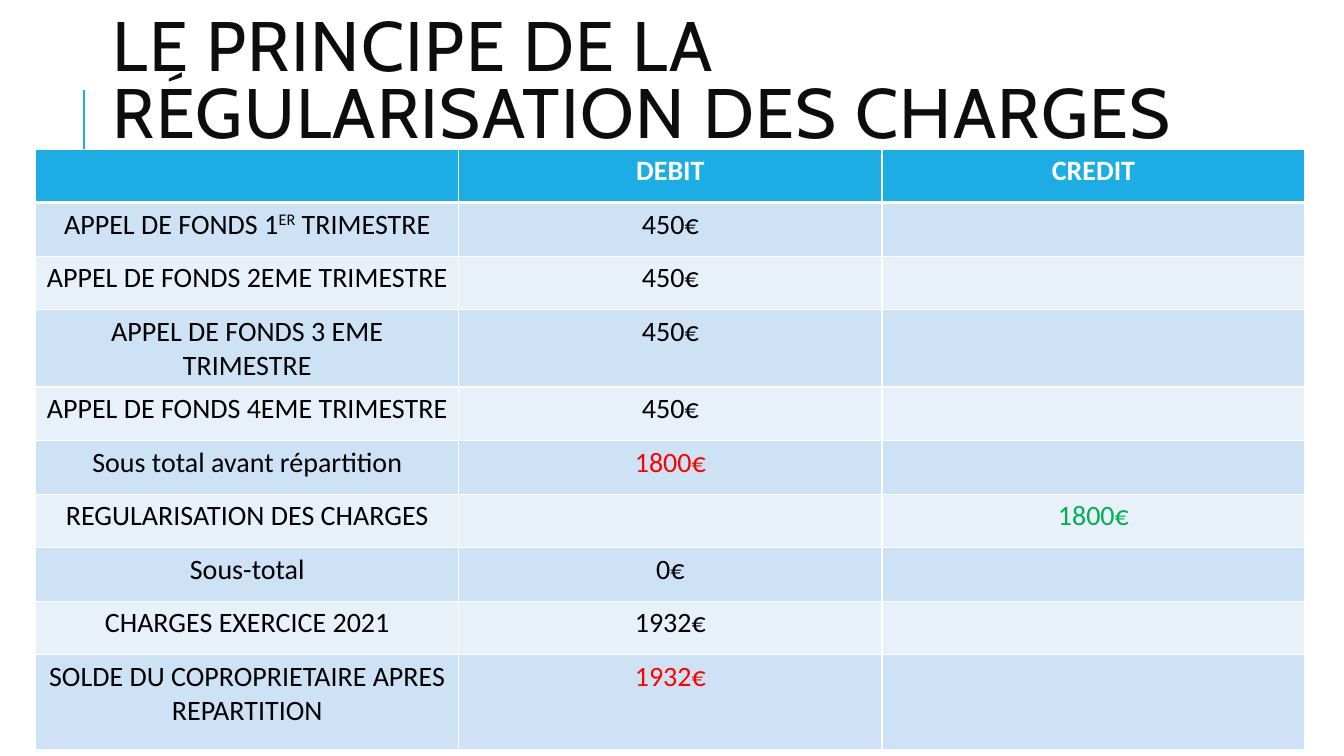
from dataclasses import dataclass

from lxml.etree import SubElement
from pptx import Presentation
from pptx.dml.color import RGBColor
from pptx.enum.shapes import MSO_CONNECTOR as Connector
from pptx.enum.text import MSO_ANCHOR as Anchor, PP_ALIGN as Align
from pptx.oxml.ns import qn
from pptx.util import Emu, Pt

PX = 9525  # EMU in one px, 96 px to the inch
BLUE = RGBColor(0x1C, 0xAD, 0xE4)
BAND_DARK = RGBColor(0xCD, 0xE3, 0xF5)
BAND_LIGHT = RGBColor(0xE8, 0xF1, 0xFA)
WHITE = RGBColor(0xFF, 0xFF, 0xFF)
BLACK = RGBColor(0x00, 0x00, 0x00)
INK = RGBColor(0x0D, 0x0D, 0x0D)
RED = RGBColor(0xFF, 0x00, 0x00)
GREEN = RGBColor(0x00, 0xB0, 0x50)

TABLE_LEFT, TABLE_TOP = 34, 142
COLUMN_WIDTH, ROW_HEIGHT, LAST_ROW_HEIGHT = 403, 51, 90


@dataclass(frozen=True)
class Entry:
    """One account line; ^ marks the start and end of a superscript."""
    label: str
    debit: str = ""
    credit: str = ""
    color: RGBColor = BLACK


HEADER = Entry("", "DEBIT", "CREDIT", WHITE)
ENTRIES = [
    HEADER,
    Entry("APPEL DE FONDS 1^ER^ TRIMESTRE", "450€"),
    Entry("APPEL DE FONDS 2EME TRIMESTRE", "450€"),
    Entry("APPEL DE FONDS 3 EME TRIMESTRE", "450€"),
    Entry("APPEL DE FONDS 4EME TRIMESTRE", "450€"),
    Entry("Sous total avant répartition", "1800€", color=RED),
    Entry("REGULARISATION DES CHARGES", credit="1800€", color=GREEN),
    Entry("Sous-total", "0€"),
    Entry("CHARGES EXERCICE 2021", "1932€"),
    Entry("SOLDE DU COPROPRIETAIRE APRES REPARTITION", "1932€", color=RED),
]


def px(length: int) -> Emu:
    return Emu(length * PX)


def add_span(para, text: str, color: RGBColor, **formats):
    span = para.add_run()
    span.text = text
    for name, value in formats.items():
        setattr(span.font, name, value)
    span.font.color.rgb = color
    return span


def set_borders(cell, top: float, bottom: float) -> None:
    """Draw the white cell borders; they precede the fill in the cell XML."""
    properties = cell._tc.get_or_add_tcPr()
    widths = {"a:lnL": 1, "a:lnR": 1, "a:lnT": top, "a:lnB": bottom}
    for index, (tag, width) in enumerate(widths.items()):
        border = SubElement(properties, qn(tag), w=str(Pt(width)))
        fill = SubElement(border, qn("a:solidFill"))
        SubElement(fill, qn("a:srgbClr"), val=str(WHITE))
        properties.insert(index, border)


def fill_cell(cell, text: str, color: RGBColor, bold: bool) -> None:
    para = cell.text_frame.paragraphs[0]
    para.alignment = Align.CENTER
    for index, part in enumerate(text.split("^")):
        if not part:
            continue
        span = add_span(para, part, color, name="Calibri", size=Pt(20), bold=bold)
        if index % 2:
            span._r.get_or_add_rPr().set("baseline", "30000")


def add_accent_line(page) -> None:
    line = page.shapes.add_connector(
        Connector.STRAIGHT, px(80), px(182), px(80), px(86))
    line.line.color.rgb = BLUE
    line.line.width = Pt(1.5)
    SubElement(line._element.spPr, qn("a:effectLst"))


def add_title(page, text: str) -> None:
    box = page.shapes.add_textbox(px(98), px(38), px(1145), px(85))
    frame = box.text_frame
    for name, value in {"word_wrap": True, "vertical_anchor": Anchor.MIDDLE}.items():
        setattr(frame, name, value)
    para = frame.paragraphs[0]
    para.line_spacing = 0.8
    span = add_span(para, text, INK, name="Cabin", size=Pt(50))
    span._r.get_or_add_rPr().set("spc", "100")


def add_accounts(page, entries: list[Entry]) -> None:
    heights = [ROW_HEIGHT] * (len(entries) - 1) + [LAST_ROW_HEIGHT]
    table = page.shapes.add_table(
        len(entries), 3, px(TABLE_LEFT), px(TABLE_TOP),
        px(3 * COLUMN_WIDTH), px(sum(heights))).table
    for column in table.columns:
        column.width = px(COLUMN_WIDTH)
    for index, (entry, height) in enumerate(zip(entries, heights)):
        table.rows[index].height = px(height)
        is_header = entry is HEADER
        band = BLUE if is_header else (BAND_LIGHT, BAND_DARK)[index % 2]
        texts = (entry.label, entry.debit, entry.credit)
        colors = (BLACK, entry.color, entry.color)
        for cell, text, color in zip(table.rows[index].cells, texts, colors):
            cell.fill.solid()
            cell.fill.fore_color.rgb = band
            set_borders(cell, top=3 if index == 1 else 1, bottom=3 if is_header else 1)
            fill_cell(cell, text, color, bold=is_header)


def main() -> None:
    deck = Presentation()
    deck.slide_width, deck.slide_height = px(1280), px(720)
    page = deck.slides.add_slide(deck.slide_layouts[6])
    page.background.fill.solid()
    page.background.fill.fore_color.rgb = WHITE

    add_accent_line(page)
    add_title(page, "LE PRINCIPE DE LA RÉGULARISATION DES CHARGES")
    add_accounts(page, ENTRIES)
    deck.save("out.pptx")


if __name__ == "__main__":
    main()
